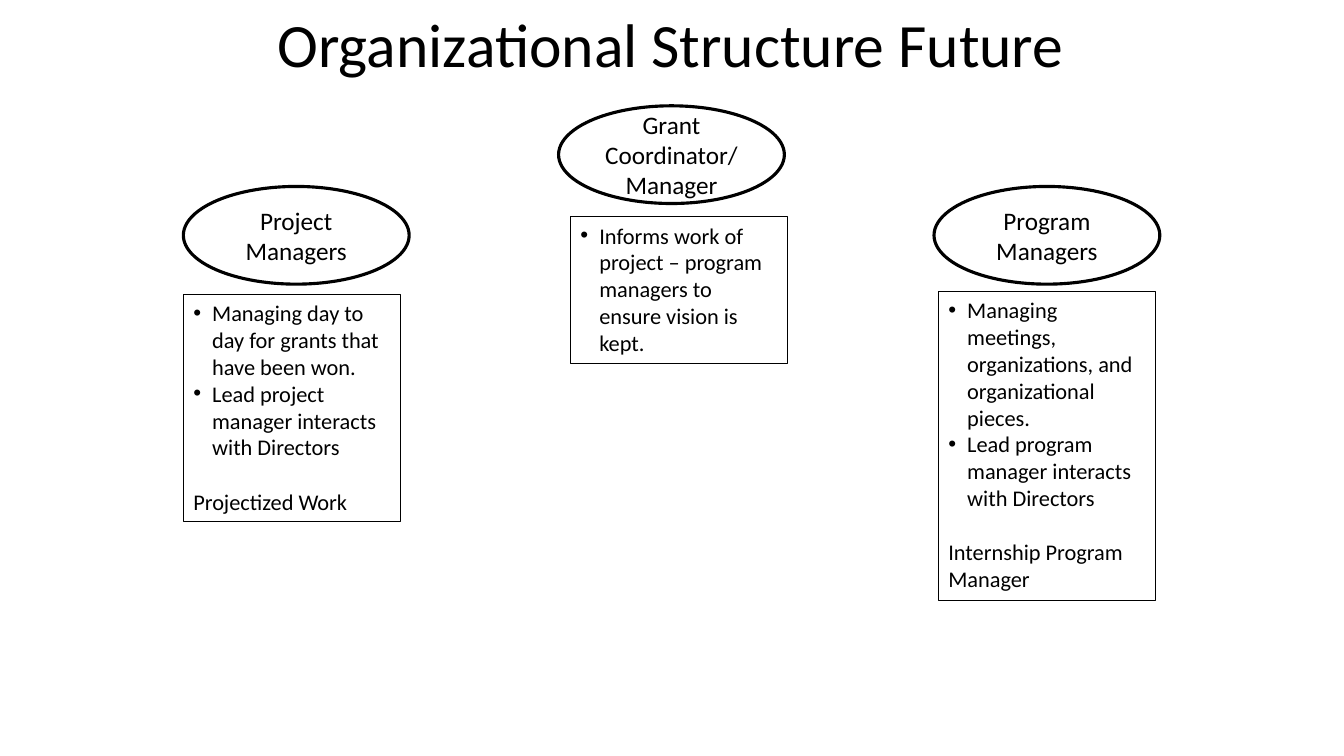
from lxml import etree
from pptx import Presentation
from pptx.dml.color import RGBColor
from pptx.enum.shapes import MSO_SHAPE
from pptx.enum.text import MSO_ANCHOR, MSO_AUTO_SIZE, PP_ALIGN
from pptx.oxml.ns import qn
from pptx.util import Pt

OVAL, RECT = MSO_SHAPE.OVAL, MSO_SHAPE.RECTANGLE
TOP, MIDDLE = MSO_ANCHOR.TOP, MSO_ANCHOR.MIDDLE
LEFT, CENTER = PP_ALIGN.LEFT, PP_ALIGN.CENTER
GROW = MSO_AUTO_SIZE.SHAPE_TO_FIT_TEXT

COLORS = {"ink": "000000", "paper": "FFFFFF"}
INK = RGBColor.from_string(COLORS["ink"])
PAPER = RGBColor.from_string(COLORS["paper"])

OVAL_W, OVAL_H = 161.3, 69.8
DUTIES_W = 154.8
INDENT = 13.5
BLANK_LINE = 19.5

# Role, oval (left, top), duties box (left, top, height), duties, closing line
ROLES = [
    ("Grant Coordinator/Manager", (399, 75.6), (407.5, 154.8, 104.6),
     ["Informs work of project – program managers to ensure vision is kept."], None),
    ("Project Managers", (131, 133.2), (131, 210.2, 162.5),
     ["Managing day to day for grants that have been won.",
      "Lead project manager interacts with Directors"], "Projectized Work"),
    ("Program Managers", (667.2, 133.2), (670.3, 208.1, 220.6),
     ["Managing meetings, organizations, and organizational pieces.",
      "Lead program manager interacts with Directors"], "Internship Program Manager"),
]


def write(p, text, size, align):
    p.alignment = align
    r = p.add_run()
    r.text = text
    for name, value in {"name": "Calibri", "size": Pt(size)}.items():
        setattr(r.font, name, value)
    r.font.color.rgb = INK


def add_outlined(kind, box, line_width, anchor):
    """Add a black-outlined shape and return it."""
    sp = s.shapes.add_shape(kind, *(Pt(v) for v in box))
    sp.shadow.inherit = False
    sp.line.color.rgb = INK
    sp.line.width = Pt(line_width)
    sp.text_frame.word_wrap = True
    sp.text_frame.vertical_anchor = anchor
    return sp


prs = Presentation()
prs.slide_width, prs.slide_height = Pt(960), Pt(540)
s = prs.slides.add_slide(prs.slide_layouts[6])

title = s.shapes.add_textbox(Pt(-0.7), Pt(0.7), Pt(960), Pt(60.5))
title.text_frame.word_wrap = True
title.text_frame.auto_size = GROW
write(title.text_frame.paragraphs[0], "Organizational Structure Future", 44, CENTER)

for role, oval_at, (left, top, height), duties, closing in ROLES:
    oval = add_outlined(OVAL, (*oval_at, OVAL_W, OVAL_H), 2.25, MIDDLE)
    oval.fill.solid()
    oval.fill.fore_color.rgb = PAPER
    write(oval.text_frame.paragraphs[0], role, 18, CENTER)

    box = add_outlined(RECT, (left, top, DUTIES_W, height), 0.75, TOP)
    box.fill.background()
    tf = box.text_frame
    tf.auto_size = GROW
    for i, duty in enumerate(duties):
        p = tf.add_paragraph() if i else tf.paragraphs[0]
        write(p, duty, 16, LEFT)
        pPr = p._p.get_or_add_pPr()
        pPr.set("marL", str(Pt(INDENT)))
        pPr.set("indent", str(-Pt(INDENT)))
        etree.SubElement(pPr, qn("a:buFont")).set("typeface", "Arial")
        etree.SubElement(pPr, qn("a:buChar")).set("char", "•")
    if closing:
        p = tf.add_paragraph()
        write(p, closing, 16, LEFT)
        p.space_before = Pt(BLANK_LINE)

prs.save("out.pptx")
